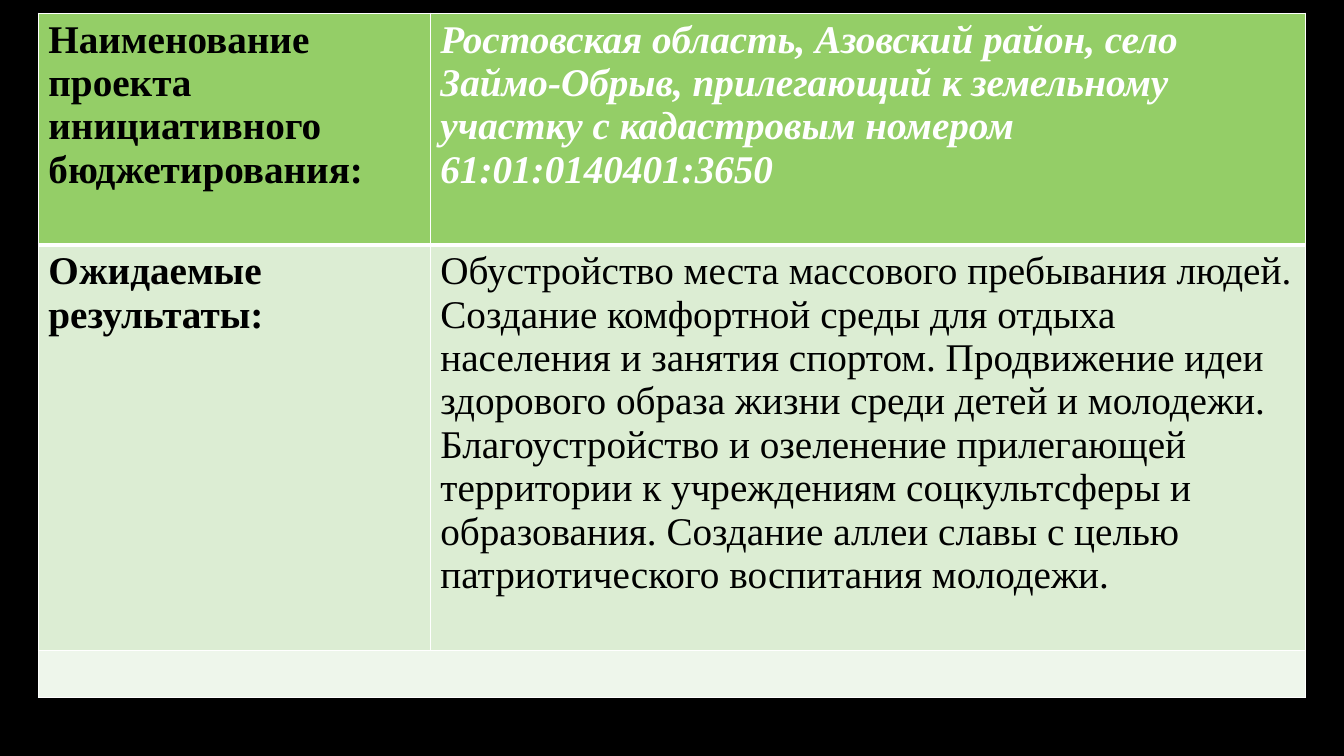
"""Build a slide with a table on a participatory budgeting project."""
import pptx
import pptx.dml.color
import pptx.oxml
import pptx.oxml.ns
import pptx.util

Pt = pptx.util.Pt


def rgb(value):
    return pptx.dml.color.RGBColor.from_string(value)


def set_borders(cell, widths):
    tc_pr = cell._tc.get_or_add_tcPr()
    for i, (side, width) in enumerate(widths.items()):
        tc_pr.insert(i, pptx.oxml.parse_xml(
            f'<a:ln{side} {pptx.oxml.ns.nsdecls("a")} w="{Pt(width)}">'
            f'<a:solidFill><a:srgbClr val="FFFFFF"/></a:solidFill></a:ln{side}>'))


prs = pptx.Presentation()
prs.slide_width, prs.slide_height = Pt(960), Pt(540)
s = prs.slides.add_slide(prs.slide_layouts[6])
s.background.fill.solid()
s.background.fill.fore_color.rgb = rgb("000000")

label = {"bold": True, "italic": False, "color": "000000"}
address = {"bold": True, "italic": True, "color": "FFFFFF"}
body = {"bold": False, "italic": False, "color": "000000"}
rows = [
    (165.5, "94CE67", [
        ("Наименование проекта инициативного бюджетирования:", label),
        ("Ростовская область, Азовский район, село Займо-Обрыв, прилегающий "
         "к земельному участку с кадастровым номером 61:01:0140401:3650", address),
    ]),
    (289.5, "DCEDD3", [
        ("Ожидаемые результаты:", label),
        ("Обустройство места массового пребывания людей. Создание комфортной "
         "среды для отдыха населения и занятия спортом. Продвижение идеи "
         "здорового образа жизни среди детей и молодежи. Благоустройство и "
         "озеленение прилегающей территории к учреждениям соцкультсферы и "
         "образования. Создание аллеи славы с целью патриотического "
         "воспитания молодежи.", body),
    ]),
    (34, "EEF6EB", [("", body), ("", body)]),
]

table = s.shapes.add_table(len(rows), 2, Pt(27.4), Pt(9.4), Pt(905), Pt(489)).table
for column, width in zip(table.columns, (280, 625)):
    column.width = Pt(width)

for i, (height, fill, texts) in enumerate(rows):
    table.rows[i].height = Pt(height)
    for j, (text, style) in enumerate(texts):
        cell = table.cell(i, j)
        cell.fill.solid()
        cell.fill.fore_color.rgb = rgb(fill)
        set_borders(cell, {"L": 1, "R": 1, "T": 3 if i == 1 else 1, "B": 3 if i == 0 else 1})
        if text:
            r = cell.text_frame.paragraphs[0].add_run()
            r.text = text
            font = {"name": "Times New Roman", "size": Pt(28),
                    "bold": style["bold"], "italic": style["italic"]}
            for name, value in font.items():
                setattr(r.font, name, value)
            r.font.color.rgb = rgb(style["color"])
table.cell(2, 0).merge(table.cell(2, 1))

prs.save("out.pptx")
